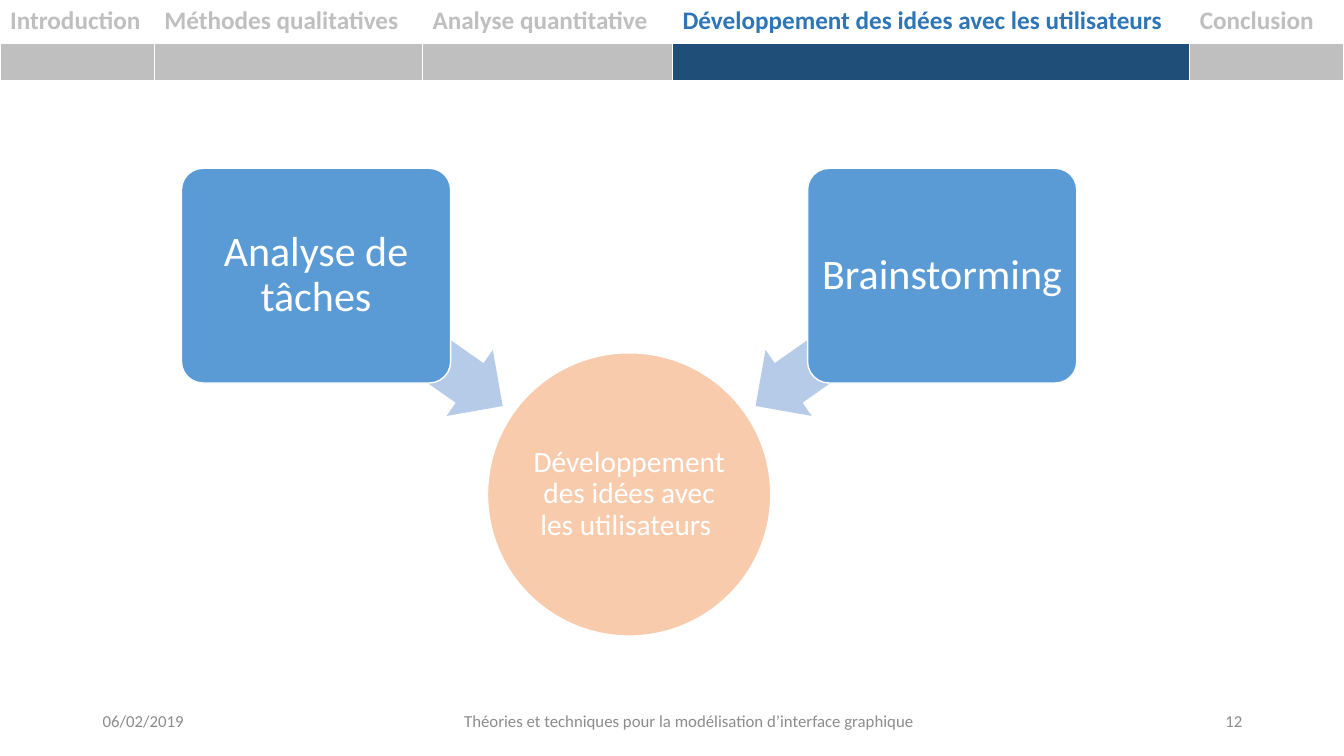
from lxml.etree import SubElement
from pptx import Presentation
from pptx.dml.color import RGBColor
from pptx.enum.shapes import MSO_SHAPE as Shape
from pptx.enum.text import MSO_ANCHOR as Anchor, PP_ALIGN as Align
from pptx.oxml.ns import qn
from pptx.util import Inches, Pt

WHITE, GREY, FOOTER_GREY = "FFFFFF", "BFBFBF", "8C8C8C"
ACTIVE_TEXT, ACTIVE_BAR = "2E75B6", "1F4E79"
BLUE, PALE_BLUE, PEACH = "5B9BD5", "B5CBE7", "F8CBAD"

SECTIONS = [
    ("Introduction", 1.53),
    ("Méthodes qualitatives", 2.66),
    ("Analyse quantitative", 2.48),
    ("Développement des idées avec les utilisateurs", 5.13),
    ("Conclusion", 1.53),
]
CURRENT_SECTION = 3


def color(hex_code):
    return RGBColor.from_string(hex_code)


def write(frame, text, size, hex_code, align=Align.LEFT, bold=False,
          spacing=None, inset=None):
    """Put one formatted paragraph, centred vertically, in a text frame."""
    frame.word_wrap = True
    frame.vertical_anchor = Anchor.MIDDLE
    if inset is not None:
        frame.margin_left = frame.margin_right = Inches(inset)
        frame.margin_top = frame.margin_bottom = Inches(inset)
    para = frame.paragraphs[0]
    para.alignment = align
    para.line_spacing = spacing
    span = para.add_run()
    span.text = text
    span.font.name = "Calibri"
    span.font.size = Pt(size)
    span.font.bold = bold
    span.font.color.rgb = color(hex_code)


def add_figure(page, kind, box, fill, line=None):
    figure = page.shapes.add_shape(kind, *map(Inches, box))
    figure.shadow.inherit = False
    figure.fill.solid()
    figure.fill.fore_color.rgb = color(fill)
    if line:
        figure.line.color.rgb = color(line)
        figure.line.width = Pt(1)
    else:
        figure.line.fill.background()
    return figure


def border_cell(cell, bottom=1):
    """Draw white borders; they must precede the fill in the cell's XML."""
    properties = cell._tc.get_or_add_tcPr()
    for side, width in (("L", 1), ("R", 1), ("T", 1), ("B", bottom)):
        edge = SubElement(properties, qn(f"a:ln{side}"), w=str(Pt(width)))
        paint = SubElement(edge, qn("a:solidFill"))
        SubElement(paint, qn("a:srgbClr"), val=WHITE)


def add_navigation(page, box):
    """Section names above a bar that marks the current section."""
    table = page.shapes.add_table(2, len(SECTIONS), *map(Inches, box)).table
    table.first_row = table.horz_banding = False
    table.rows[0].height = Inches(0.42)
    table.rows[1].height = Inches(box[3] - 0.42)
    for column, (name, width) in enumerate(SECTIONS):
        table.columns[column].width = Inches(width)
        current = column == CURRENT_SECTION
        label, bar = table.cell(0, column), table.cell(1, column)
        border_cell(label, bottom=3)
        label.fill.background()
        write(label.text_frame, name, 18, ACTIVE_TEXT if current else GREY,
              bold=True)
        label.vertical_anchor = Anchor.TOP
        border_cell(bar)
        bar.fill.solid()
        bar.fill.fore_color.rgb = color(ACTIVE_BAR if current else GREY)
        bar.margin_top = bar.margin_bottom = 0


def add_diagram(page, box):
    """Two methods whose arrows converge on a central circle."""
    left, top, width, height = box
    diameter, method_width = 2.81, 2.67
    circle = add_figure(
        page, Shape.OVAL,
        (left + (width - diameter) / 2, top + height - diameter,
         diameter, diameter), PEACH, WHITE)
    write(circle.text_frame, "Développement des idées avec les utilisateurs ",
          21, WHITE, Align.CENTER, spacing=0.9, inset=0.01)

    methods = [
        ("Analyse de tâches", left, left + 1.13, 215),
        ("Brainstorming", left + width - method_width,
         left + width - 1.13 - 2.26, 325),
    ]
    for name, method_left, arrow_left, angle in methods:
        arrow = add_figure(page, Shape.LEFT_ARROW,
                           (arrow_left, top + 1.31, 2.26, 0.8), PALE_BLUE)
        arrow.adjustments[0], arrow.adjustments[1] = 0.6, 0.5
        arrow.rotation = angle
        method = add_figure(page, Shape.ROUNDED_RECTANGLE,
                            (method_left, top, method_width, 2.13),
                            BLUE, WHITE)
        method.adjustments[0] = 0.1
        write(method.text_frame, name, 30, WHITE, Align.CENTER,
              spacing=0.9, inset=0.06)


def add_footer(page, box):
    left, top, width, height = box
    parts = [
        ("06/02/2019", left, 3, Align.LEFT),
        ("Théories et techniques pour la modélisation d’interface graphique",
         left + 3.5, 4.83, Align.CENTER),
        ("12", left + width - 3, 3, Align.RIGHT),
    ]
    for text, part_left, part_width, align in parts:
        part = page.shapes.add_textbox(
            *map(Inches, (part_left, top, part_width, height)))
        write(part.text_frame, text, 12, FOOTER_GREY, align)


def main():
    deck = Presentation()
    deck.slide_width, deck.slide_height = Inches(13.33), Inches(7.5)
    page = deck.slides.add_slide(deck.slide_layouts[6])
    add_navigation(page, (0, 0, 13.33, 0.8))
    add_diagram(page, (1.8, 1.67, 8.88, 4.64))
    add_footer(page, (0.92, 6.95, 11.5, 0.4))
    deck.save("out.pptx")


if __name__ == "__main__":
    main()
